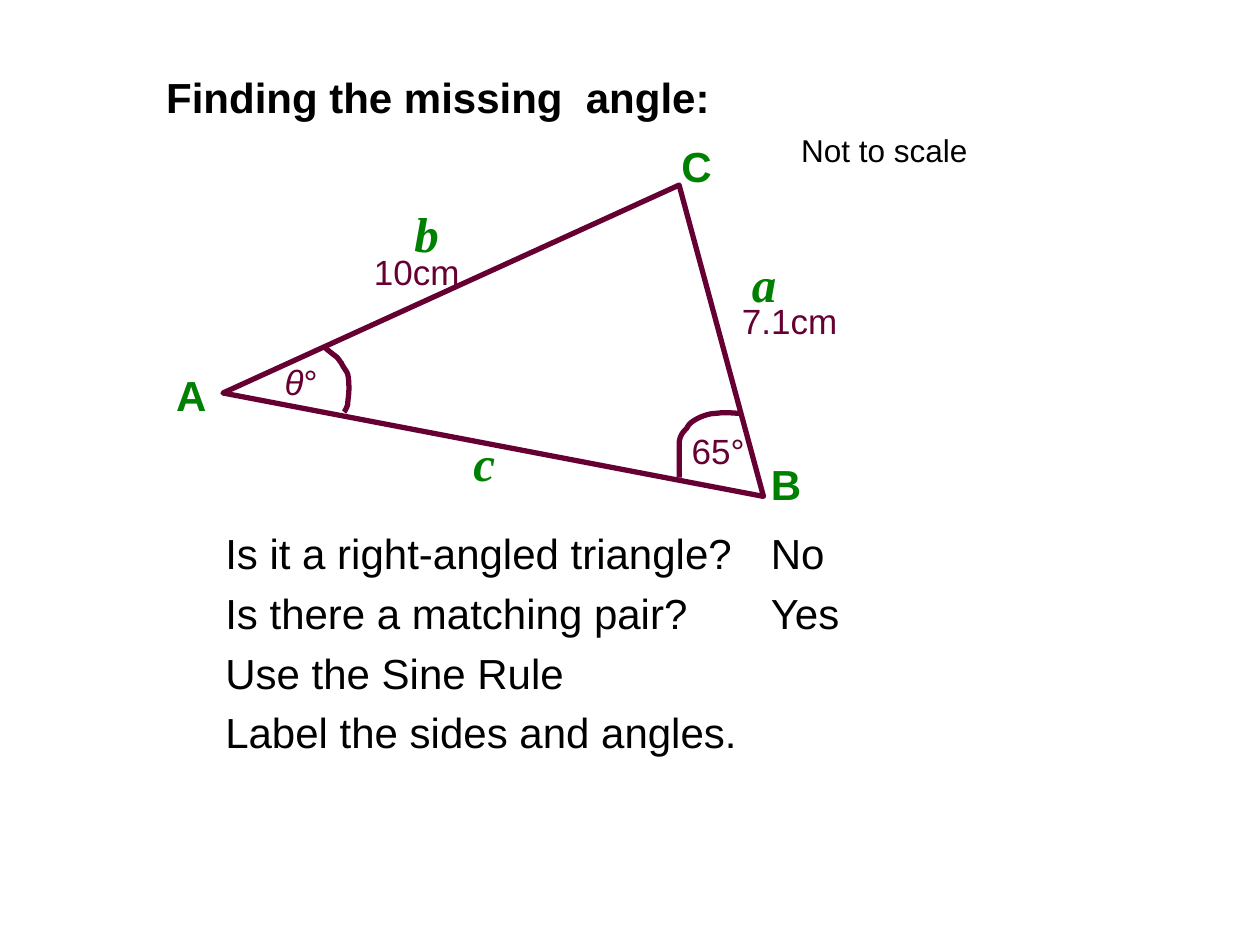
from dataclasses import dataclass

from lxml import etree
from pptx import Presentation
from pptx import util as u
from pptx.dml.color import RGBColor
from pptx.enum import text as t
from pptx.oxml.ns import qn


@dataclass(frozen=True)
class Theme:
    ink: str = "000000"
    green: str = "008000"
    plum: str = "660033"
    sans: str = "Arial"
    serif: str = "Times New Roman"
    body: int = 24
    side: int = 28
    size: int = 20
    note: int = 18
    line: int = 3


@dataclass(frozen=True)
class Style:
    color: str
    face: str
    size: int
    bold: bool = False
    italic: bool = False
    wrap: bool = True


@dataclass(frozen=True)
class Label:
    words: str
    left: float
    top: float
    width: float
    height: float
    style: Style
    slant: int = 0  # number of leading letters set in italics


Point = tuple[float, float]
TH = Theme()
HEAD = Style(TH.ink, TH.sans, TH.body, bold=True)
BODY = Style(TH.ink, TH.sans, TH.body)
NOTE = Style(TH.ink, TH.sans, TH.note)
CORNER = Style(TH.green, TH.sans, TH.body, bold=True)
SIDE = Style(TH.green, TH.serif, TH.side, bold=True, italic=True, wrap=False)
SIZE = Style(TH.plum, TH.sans, TH.size)

TITLE = Label("Finding the missing  angle:", 87.8, 37.4, 368.6, 36, HEAD)

# Questions and answers, one row each
ROWS = [
    ("Is it a right-angled triangle?", "No"),
    ("Is there a matching pair?", "Yes"),
    ("Use the Sine Rule", ""),
    ("Label the sides and angles.", ""),
]
ROW_TOP, ROW_STEP = 298.1, 34.1
ASK_LEFT, REPLY_LEFT = 121.7, 433.4

LABELS = [
    Label("A", 93.6, 207.4, 39.6, 36, CORNER),
    Label("B", 433.4, 258.5, 39.6, 36, CORNER),
    Label("C", 382.3, 77, 39.6, 36, CORNER),
    Label("a", 422.6, 141.1, 28.8, 41, SIDE),
    Label("b", 229.7, 113, 28.8, 41, SIDE),
    Label("c", 263.5, 243.4, 26.6, 41, SIDE),
    Label("10cm", 206.6, 139.7, 73.4, 31, SIZE),
    Label("7.1cm", 416.9, 167.8, 73.4, 31, SIZE),
    Label("65°", 388.1, 241.9, 73.4, 31, SIZE),
    Label("θ°", 155.5, 202.3, 73.4, 31, SIZE, slant=1),
    Label("Not to scale", 450.7, 71.3, 130.3, 28.8, NOTE),
]

TRIANGLE = [(127.4, 224.6), (388.1, 105.8), (436.3, 283.7)]

# Angle marks: a start, then two control points and an end per curve
ARC_A = [
    (185.8, 198.7),
    (186.5, 199.4), (190.1, 202.3), (192.2, 203.8),
    (193.7, 205.2), (193.7, 205.9), (195.1, 207.4),
    (195.8, 209.5), (198, 211.7), (198.7, 213.8),
    (199.4, 216.7), (199.4, 219.6), (199.4, 222.5),
    (199.4, 225.4), (198.7, 229), (198.7, 231.1),
    (198, 233.3), (197.3, 234.7), (196.6, 235.4),
]
ARC_B = [
    (422.6, 236.2),
    (420.5, 236.2), (413.3, 235.4), (409.7, 236.2),
    (405.4, 236.2), (401.8, 237.6), (398.9, 239),
    (396, 240.5), (393.8, 241.9), (392.4, 244.8),
    (390.2, 247), (388.8, 248.4), (388.1, 252.7),
    (388.1, 257.8), (388.1, 268.6), (388.1, 272.9),
]


def fill_text(shape, label: Label) -> None:
    """Write a label's words into a text shape."""
    style = label.style
    frame = shape.text_frame
    form = {
        "word_wrap": style.wrap,
        "auto_size": t.MSO_AUTO_SIZE.SHAPE_TO_FIT_TEXT,
        "vertical_anchor": t.MSO_ANCHOR.TOP,
    }
    for name, value in form.items():
        setattr(frame, name, value)
    para = frame.paragraphs[0]
    para.alignment = t.PP_ALIGN.LEFT
    cut = label.slant
    for words, tilt in ((label.words[:cut], True), (label.words[cut:], style.italic)):
        if not words:
            continue
        run = para.add_run()
        run.text = words
        font = {"name": style.face, "size": u.Pt(style.size),
                "bold": style.bold, "italic": tilt}
        for name, value in font.items():
            setattr(run.font, name, value)
        run.font.color.rgb = RGBColor.from_string(style.color)


def add_label(slide, label: Label) -> None:
    box = slide.shapes.add_textbox(
        *map(u.Pt, (label.left, label.top, label.width, label.height)))
    fill_text(box, label)


def add_title(slide, label: Label) -> None:
    title = slide.shapes.title
    for name in ("left", "top", "width", "height"):
        setattr(title, name, u.Pt(getattr(label, name)))
    fill_text(title, label)


def trace(nodes: list[Point], steps: int = 8) -> list[Point]:
    """Turn a chain of cubic curves into short straight steps."""
    points = [nodes[0]]
    for at in range(0, len(nodes) - 1, 3):
        quad = nodes[at:at + 4]
        for step in range(1, steps + 1):
            k = step / steps
            parts = ((1 - k) ** 3, 3 * k * (1 - k) ** 2, 3 * k * k * (1 - k), k ** 3)
            points.append((sum(w * p[0] for w, p in zip(parts, quad)),
                           sum(w * p[1] for w, p in zip(parts, quad))))
    return points


def add_line(slide, points: list[Point], close: bool) -> None:
    """Draw an unfilled outline with round joins."""
    spots = [(u.Pt(x), u.Pt(y)) for x, y in points]
    pen = slide.shapes.build_freeform(*spots[0])
    pen.add_line_segments(spots[1:], close=close)
    shape = pen.convert_to_shape()
    shape.shadow.inherit = False
    shape.fill.background()
    shape.line.width = u.Pt(TH.line)
    shape.line.color.rgb = RGBColor.from_string(TH.plum)
    etree.SubElement(shape.line._get_or_add_ln(), qn("a:round"))


def main() -> None:
    deck = Presentation()
    deck.slide_width, deck.slide_height = u.Pt(720), u.Pt(540)
    slide = deck.slides.add_slide(deck.slide_layouts[5])
    add_title(slide, TITLE)

    # Triangle and angle marks
    add_line(slide, TRIANGLE, True)
    for arc in (ARC_A, ARC_B):
        add_line(slide, trace(arc), False)

    # Labels around the triangle
    for label in LABELS:
        add_label(slide, label)

    # Questions with their answers
    for row, (ask, reply) in enumerate(ROWS):
        top = ROW_TOP + row * ROW_STEP
        add_label(slide, Label(ask, ASK_LEFT, top, 330, 36, BODY))
        if reply:
            add_label(slide, Label(reply, REPLY_LEFT, top, 57, 36, BODY))

    deck.save("out.pptx")


if __name__ == "__main__":
    main()
